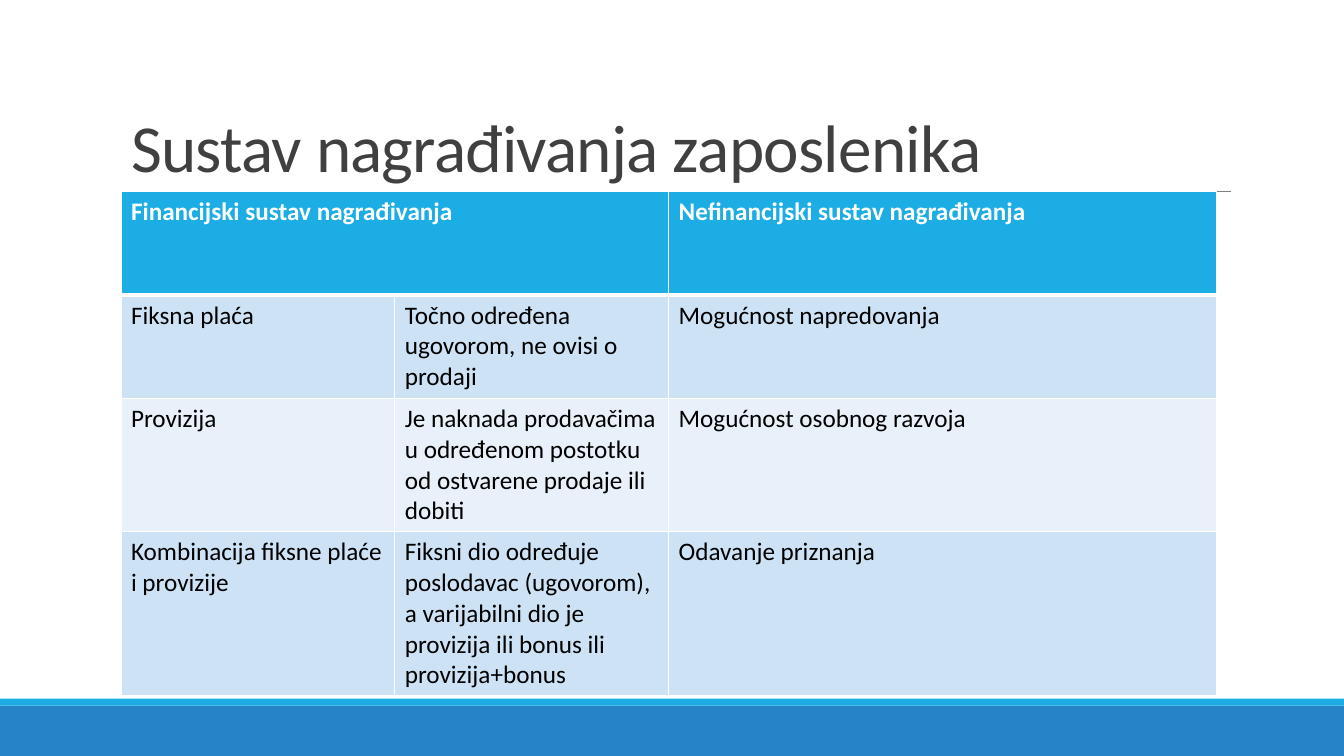
"""Build the slide on the reward system for employees."""
from dataclasses import dataclass

from lxml import etree
from pptx import Presentation
from pptx.dml.color import RGBColor
from pptx.enum import shapes, text
from pptx.oxml import ns
from pptx.util import Pt

FONT = "Calibri"
WHITE, BLACK, GREY, INK = "FFFFFF", "000000", "808080", "404040"
CYAN, BLUE, PALE, LIGHT = "1CADE4", "2683C6", "CDE3F5", "E8F1FA"
WIDTH, HEIGHT = 960, 540
LEFT, TOP = 86.4, 136.8


@dataclass
class Bar:
    top: float
    height: float
    fill: str


@dataclass
class Row:
    height: float
    fill: str
    color: str
    bold: bool
    above: float
    below: float
    cells: tuple[str, str, str]


BARS = [Bar(504, 36, BLUE), Bar(499, 5, CYAN)]
COLS = [195.6, 195.6, 391.5]
ROWS = [
    Row(74, CYAN, WHITE, True, 1, 3,
        ("Financijski sustav nagrađivanja", "", "Nefinancijski sustav nagrađivanja")),
    Row(74, PALE, BLACK, False, 3, 1,
        ("Fiksna plaća", "Točno određena ugovorom, ne ovisi o prodaji",
         "Mogućnost napredovanja")),
    Row(94.5, LIGHT, BLACK, False, 1, 1,
        ("Provizija",
         "Je naknada prodavačima u određenom postotku od ostvarene prodaje ili dobiti",
         "Mogućnost osobnog razvoja")),
    Row(116, PALE, BLACK, False, 1, 1,
        ("Kombinacija fiksne plaće i provizije",
         "Fiksni dio određuje poslodavac (ugovorom), a varijabilni dio je "
         "provizija ili bonus ili provizija+bonus",
         "Odavanje priznanja")),
]


def paint(target, color: str) -> None:
    target.solid()
    target.fore_color.rgb = RGBColor.from_string(color)


def style(par, size: float, color: str, bold: bool = False) -> None:
    for run in par.runs:
        run.font.name = FONT
        run.font.size = Pt(size)
        run.font.bold = bold
        run.font.color.rgb = RGBColor.from_string(color)


def add_bar(slide, bar: Bar) -> None:
    shape = slide.shapes.add_shape(
        shapes.MSO_SHAPE.RECTANGLE, 0, Pt(bar.top), Pt(WIDTH), Pt(bar.height))
    shape.shadow.inherit = False
    paint(shape.fill, bar.fill)
    shape.line.fill.background()


def add_rule(slide) -> None:
    rule = slide.shapes.add_connector(
        shapes.MSO_CONNECTOR.STRAIGHT, Pt(94.3), Pt(TOP), Pt(879), Pt(TOP))
    rule.line.width = Pt(0.5)
    paint(rule.line.fill, GREY)
    etree.SubElement(rule._element.spPr, ns.qn("a:effectLst"))


def set_title(slide, words: str) -> None:
    title = slide.shapes.title
    title.left, title.top, title.width, title.height = Pt(LEFT), Pt(22.6), Pt(792), Pt(114.2)
    frame = title.text_frame
    frame.text = words
    frame.word_wrap = True
    frame.auto_size = text.MSO_AUTO_SIZE.NONE
    frame.vertical_anchor = text.MSO_ANCHOR.BOTTOM
    par = frame.paragraphs[0]
    par.alignment = text.PP_ALIGN.LEFT
    par.line_spacing = 0.85
    style(par, 48, INK)
    par.runs[0].font._element.set("spc", "-50")


def set_edges(cell, above: float, below: float) -> None:
    props = cell._tc.get_or_add_tcPr()
    widths = {"lnL": 1, "lnR": 1, "lnT": above, "lnB": below}
    for spot, (tag, width) in enumerate(widths.items()):
        edge = etree.Element(ns.qn("a:" + tag), w=str(Pt(width)))
        fill = etree.SubElement(edge, ns.qn("a:solidFill"))
        etree.SubElement(fill, ns.qn("a:srgbClr"), val=WHITE)
        props.insert(spot, edge)


def add_grid(slide) -> None:
    total = sum(row.height for row in ROWS)
    table = slide.shapes.add_table(
        len(ROWS), len(COLS), Pt(LEFT), Pt(TOP), Pt(sum(COLS)), Pt(total)).table
    for col, width in zip(table.columns, COLS):
        col.width = Pt(width)
    for line, row in zip(table.rows, ROWS):
        line.height = Pt(row.height)
        for cell, words in zip(line.cells, row.cells):
            cell.text_frame.text = words
            style(cell.text_frame.paragraphs[0], 18, row.color, row.bold)
            paint(cell.fill, row.fill)
            set_edges(cell, row.above, row.below)
    table.cell(0, 0).merge(table.cell(0, 1))


def main() -> None:
    deck = Presentation()
    deck.slide_width, deck.slide_height = Pt(WIDTH), Pt(HEIGHT)
    slide = deck.slides.add_slide(deck.slide_layouts.get_by_name("Title Only"))
    paint(slide.background.fill, WHITE)
    for bar in BARS:
        add_bar(slide, bar)
    add_rule(slide)
    set_title(slide, "Sustav nagrađivanja zaposlenika")
    add_grid(slide)
    deck.save("out.pptx")


if __name__ == "__main__":
    main()
